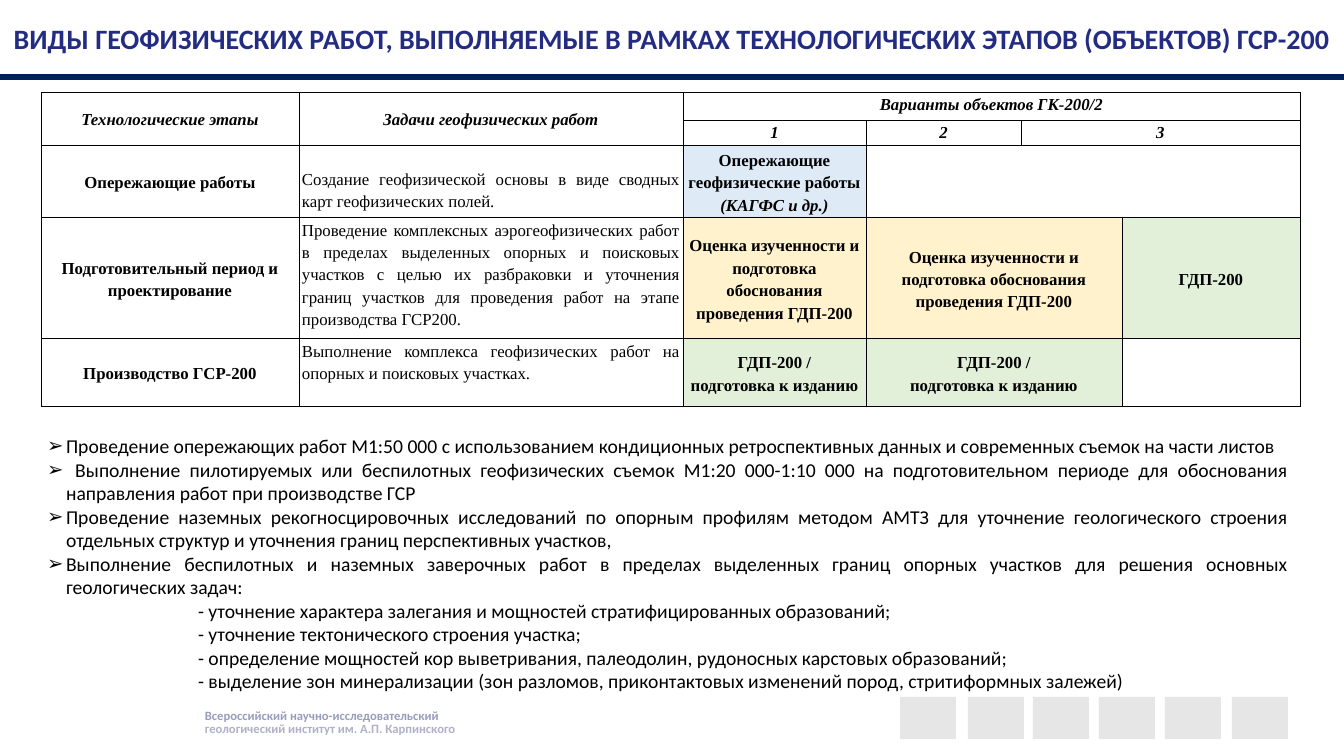
"""Builds the slide on geophysical work types within the GSR-200 stages."""
from lxml import etree
from pptx import Presentation
from pptx.dml.color import RGBColor
from pptx.enum.shapes import MSO_CONNECTOR, MSO_SHAPE
from pptx.enum.text import MSO_ANCHOR, MSO_AUTO_SIZE, PP_ALIGN
from pptx.oxml.ns import qn
from pptx.util import Pt

PX = 914400 / 100.8
CENTER, JUSTIFY, LEFT = PP_ALIGN.CENTER, PP_ALIGN.JUSTIFY, PP_ALIGN.LEFT
TOP, MIDDLE = MSO_ANCHOR.TOP, MSO_ANCHOR.MIDDLE
NO_AUTOFIT = MSO_AUTO_SIZE.NONE
RECTANGLE, STRAIGHT = MSO_SHAPE.RECTANGLE, MSO_CONNECTOR.STRAIGHT

BLACK = RGBColor(0x00, 0x00, 0x00)
WHITE = RGBColor(0xFF, 0xFF, 0xFF)
TITLE_BLUE = RGBColor(0x23, 0x2C, 0x82)
RULE_BLUE = RGBColor(0x00, 0x20, 0x60)
PALE_BLUE = RGBColor(0xDE, 0xEA, 0xF6)
PALE_YELLOW = RGBColor(0xFF, 0xF2, 0xCC)
PALE_GREEN = RGBColor(0xE2, 0xEF, 0xD9)
SQUARE_GRAY = RGBColor(0xD9, 0xD9, 0xD9)
INSTITUTE_TOP = RGBColor(0x9A, 0x9C, 0xBB)
INSTITUTE_BOTTOM = RGBColor(0xB0, 0xB1, 0xC6)

COLUMN_WIDTHS = [258, 384, 183, 155, 101, 178]
ROW_HEIGHTS = [28, 25, 72, 121, 68]
CELLS = [
    (0, 0, 2, 1, WHITE, "Технологические этапы"),
    (0, 1, 2, 1, WHITE, "Задачи геофизических работ"),
    (0, 2, 1, 4, WHITE, "Варианты объектов ГК-200/2"),
    (1, 2, 1, 1, WHITE, "1"),
    (1, 3, 1, 1, WHITE, "2"),
    (1, 4, 1, 2, WHITE, "3"),
    (2, 0, 1, 1, WHITE, "Опережающие работы"),
    (2, 1, 1, 1, WHITE, "Создание геофизической основы в виде сводных карт геофизических полей."),
    (2, 2, 1, 1, PALE_BLUE, "Опережающие геофизические работы "),
    (2, 3, 1, 3, WHITE, ""),
    (3, 0, 1, 1, WHITE, "Подготовительный период и проектирование"),
    (3, 1, 1, 1, WHITE, "Проведение комплексных аэрогеофизических работ в пределах выделенных "
     "опорных и поисковых участков с целью их разбраковки и уточнения границ участков "
     "для проведения работ на этапе производства ГСР200."),
    (3, 2, 1, 1, PALE_YELLOW, "Оценка изученности и подготовка обоснования проведения ГДП-200"),
    (3, 3, 1, 2, PALE_YELLOW, "Оценка изученности и подготовка обоснования проведения ГДП-200"),
    (3, 5, 1, 1, PALE_GREEN, "ГДП-200"),
    (4, 0, 1, 1, WHITE, "Производство ГСР-200"),
    (4, 1, 1, 1, WHITE, "Выполнение комплекса геофизических работ на опорных и поисковых участках."),
    (4, 2, 1, 1, PALE_GREEN, "ГДП-200 /\nподготовка к изданию"),
    (4, 3, 1, 2, PALE_GREEN, "ГДП-200 /\nподготовка к изданию"),
    (4, 5, 1, 1, WHITE, ""),
]
WORKS = [
    (LEFT, "Проведение опережающих работ М1:50 000 с использованием кондиционных "
     "ретроспективных данных и современных съемок на части листов"),
    (JUSTIFY, " Выполнение пилотируемых или беспилотных геофизических съемок М1:20 000-1:10 000 "
     "на подготовительном периоде для обоснования направления работ при производстве ГСР"),
    (JUSTIFY, "Проведение наземных рекогносцировочных исследований по опорным профилям методом "
     "АМТЗ для уточнение геологического строения отдельных структур и уточнения границ "
     "перспективных участков,"),
    (JUSTIFY, "Выполнение беспилотных и наземных заверочных работ в пределах выделенных границ "
     "опорных участков для решения основных геологических задач:"),
]
GEOLOGICAL_TASKS = [
    "- уточнение характера залегания и мощностей стратифицированных образований;",
    "- уточнение тектонического строения участка;",
    "- определение мощностей кор выветривания, палеодолин, рудоносных карстовых образований;",
    "- выделение зон минерализации (зон разломов, приконтактовых изменений пород, "
    "стритиформных залежей)",
]


def px(*lengths):
    return [round(length * PX) for length in lengths]


def write(paragraph, text, font_name, size, color, bold=False, italic=False):
    run = paragraph.add_run()
    run.text = text
    run.font.name = font_name
    run.font.size = Pt(size)
    run.font.color.rgb = color
    run.font.bold = bold
    run.font.italic = italic


deck = Presentation()
deck.slide_width, deck.slide_height = px(1344, 756)
slide = deck.slides.add_slide(deck.slide_layouts[1])

for left, top, line, color in [
    (195, 716, "геологический институт им. А.П. Карпинского", INSTITUTE_BOTTOM),
    (195, 703, "Всероссийский научно-исследовательский", INSTITUTE_TOP),
]:
    institute = slide.shapes.add_textbox(*px(left, top, 273, 25))
    institute.text_frame.word_wrap = False
    write(institute.text_frame.paragraphs[0], line, "Calibri", 9, color, bold=True)

for left in [900, 968, 1033, 1099, 1165, 1232]:
    square = slide.shapes.add_shape(RECTANGLE, *px(left, 697, 56, 42))
    square.shadow.inherit = False
    square.fill.solid()
    square.fill.fore_color.rgb = SQUARE_GRAY
    square.line.fill.background()
    gray = square.fill._xPr.find(".//" + qn("a:srgbClr"))
    etree.SubElement(gray, qn("a:alpha"), val="65000")

title = slide.shapes.title
title.left, title.top, title.width, title.height = px(0, 0, 1344, 77)
title.text_frame.auto_size = NO_AUTOFIT
title.text_frame.vertical_anchor = MIDDLE
heading = title.text_frame.paragraphs[0]
heading.alignment = CENTER
write(heading, "ВИДЫ ГЕОФИЗИЧЕСКИХ РАБОТ, ВЫПОЛНЯЕМЫЕ В РАМКАХ ТЕХНОЛОГИЧЕСКИХ "
      "ЭТАПОВ (ОБЪЕКТОВ) ГСР-200", "Calibri", 20, TITLE_BLUE, bold=True)

title_rule = slide.shapes.add_connector(STRAIGHT, *px(0, 77, 1344, 77))
title_rule.line.color.rgb = RULE_BLUE
title_rule.line.width = Pt(4.5)
etree.SubElement(title_rule._element.spPr, qn("a:effectLst"))

stages = slide.shapes.add_table(
    len(ROW_HEIGHTS), len(COLUMN_WIDTHS),
    *px(41, 92, sum(COLUMN_WIDTHS), sum(ROW_HEIGHTS))).table
stages.first_row = stages.horz_banding = False
for column, width in zip(stages.columns, px(*COLUMN_WIDTHS)):
    column.width = width
for row, height in zip(stages.rows, px(*ROW_HEIGHTS)):
    row.height = height

for cell in stages.iter_cells():
    cell.margin_left, cell.margin_right, cell.margin_top, cell.margin_bottom = px(3, 3, 0, 0)
    properties = cell._tc.get_or_add_tcPr()
    for side in ("a:lnL", "a:lnR", "a:lnT", "a:lnB"):
        border = etree.SubElement(properties, qn(side), w=str(Pt(0.25)))
        border_fill = etree.SubElement(border, qn("a:solidFill"))
        etree.SubElement(border_fill, qn("a:srgbClr"), val=str(BLACK))
    cell.fill.solid()
    cell.fill.fore_color.rgb = WHITE

for row, column, row_span, column_span, fill, text in CELLS:
    cell = stages.cell(row, column)
    if row_span > 1 or column_span > 1:
        cell.merge(stages.cell(row + row_span - 1, column + column_span - 1))
    cell.fill.fore_color.rgb = fill
    is_header = row < 2
    is_task = column == 1 and not is_header
    cell.vertical_anchor = TOP if is_task or (is_header and column > 1) else MIDDLE
    for index, line in enumerate(text.split("\n")):
        paragraph = cell.text_frame.add_paragraph() if index else cell.text_frame.paragraphs[0]
        paragraph.alignment = JUSTIFY if is_task else CENTER
        paragraph.line_spacing = 1.2
        if line:
            write(paragraph, line, "Times New Roman", 12, BLACK, not is_task, is_header)

stages.cell(2, 1).margin_top = px(22)[0]
write(stages.cell(2, 2).text_frame.paragraphs[0], "(КАГФС и др.)",
      "Times New Roman", 12, BLACK, bold=True, italic=True)

works = slide.placeholders[1]
works.left, works.top, works.width, works.height = px(37, 429, 1262, 271)
works.text_frame.auto_size = NO_AUTOFIT
entries = [(alignment, 0, 19, -19, text) for alignment, text in WORKS]
entries += [(LEFT, 3, 151, 0, text) for text in GEOLOGICAL_TASKS]
for index, (alignment, level, margin, indent, text) in enumerate(entries):
    paragraph = works.text_frame.add_paragraph() if index else works.text_frame.paragraphs[0]
    paragraph.alignment = alignment
    paragraph.level = level
    paragraph.space_before = Pt(0)
    properties = paragraph._p.get_or_add_pPr()
    properties.set("marL", str(px(margin)[0]))
    properties.set("indent", str(px(indent)[0]))
    if level:
        etree.SubElement(properties, qn("a:buNone"))
    else:
        etree.SubElement(properties, qn("a:buChar"), char="➢")
    write(paragraph, text, "Calibri", 14, BLACK)

deck.save("out.pptx")
